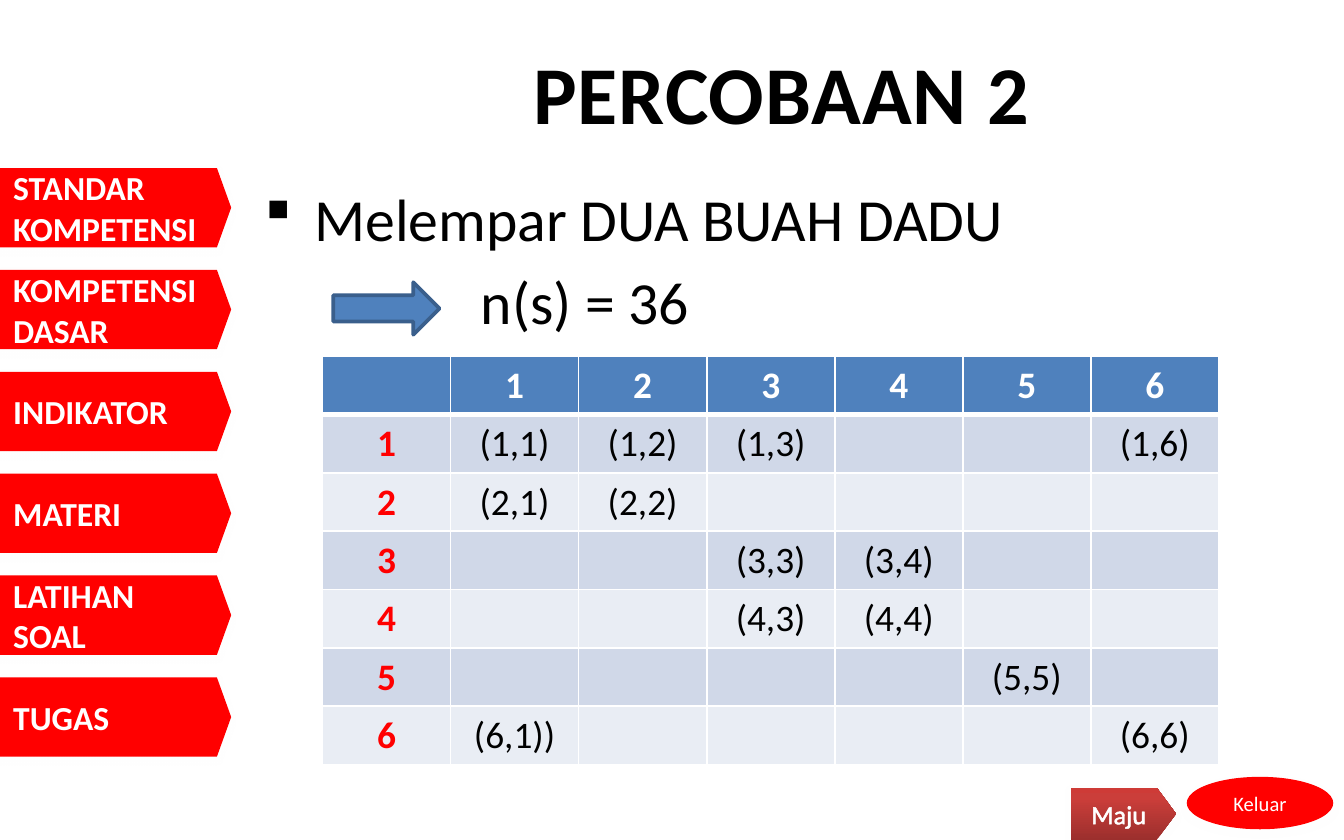
from typing import NamedTuple

from lxml.etree import SubElement
from pptx import Presentation
from pptx.dml.color import RGBColor
from pptx.enum.shapes import MSO_SHAPE
from pptx.enum.text import MSO_ANCHOR, PP_ALIGN
from pptx.oxml.ns import qn
from pptx.util import Inches, Pt

BLACK = RGBColor(0x00, 0x00, 0x00)
WHITE = RGBColor(0xFF, 0xFF, 0xFF)
RED = RGBColor(0xFF, 0x00, 0x00)
BLUE = RGBColor(0x4F, 0x81, 0xBD)
BLUE_EDGE = RGBColor(0x3A, 0x5F, 0x8C)
BANDS = (RGBColor(0xD0, 0xD8, 0xE8), RGBColor(0xE9, 0xED, 0xF4))
GRADIENT = ((0, RGBColor(0x9C, 0x2F, 0x2D)), (80, RGBColor(0xCB, 0x3E, 0x3A)),
            (100, RGBColor(0xCE, 0x3B, 0x37)))
FONT = "Calibri"


class Button(NamedTuple):
    text: str
    left: float
    top: float
    width: float
    height: float
    size: int
    kind: int = MSO_SHAPE.PENTAGON
    adj: float | None = None
    bold: bool = False
    align: int = PP_ALIGN.CENTER


MENU = ("STANDAR KOMPETENSI", "KOMPETENSI DASAR", "INDIKATOR", "MATERI",
        "LATIHAN SOAL", "TUGAS")
MENU_TOP, MENU_STEP = 1.25, 0.758
OUTCOMES = {(1, 1): "(1,1)", (1, 2): "(1,2)", (1, 3): "(1,3)", (1, 6): "(1,6)",
            (2, 1): "(2,1)", (2, 2): "(2,2)", (3, 3): "(3,3)", (3, 4): "(3,4)",
            (4, 3): "(4,3)", (4, 4): "(4,4)", (5, 5): "(5,5)",
            (6, 1): "(6,1))", (6, 6): "(6,6)"}


def set_font(font, size: float, color: RGBColor, bold: bool = False) -> None:
    font.name, font.size, font.bold = FONT, Pt(size), bold
    font.color.rgb = color


def add_solid(parent, color: RGBColor):
    fill = SubElement(parent, qn("a:solidFill"))
    return SubElement(fill, qn("a:srgbClr"), val=str(color))


def add_shadow(s) -> None:
    s.shadow.inherit = False
    effects = s._element.spPr.find(qn("a:effectLst"))
    shadow = SubElement(effects, qn("a:outerShdw"), blurRad=str(Pt(3.1)),
                        dist=str(Pt(1.8)), dir="5400000", rotWithShape="0")
    SubElement(add_solid(shadow, BLACK), qn("a:alpha"), val="35000")


def add_button(slide, b: Button):
    s = slide.shapes.add_shape(b.kind, Inches(b.left), Inches(b.top),
                               Inches(b.width), Inches(b.height))
    if b.adj is not None:
        s.adjustments[0] = b.adj
    s.fill.solid()
    s.fill.fore_color.rgb = RED
    s.line.fill.background()
    add_shadow(s)
    tf = s.text_frame
    tf.word_wrap = True
    tf.vertical_anchor = MSO_ANCHOR.MIDDLE
    tf.text = b.text
    p = tf.paragraphs[0]
    p.alignment = b.align
    set_font(p.runs[0].font, b.size, WHITE, b.bold)
    return s


def set_gradient(s) -> None:
    s.fill.gradient()
    s.fill.gradient_angle = 90
    stops = s._element.spPr.find(".//" + qn("a:gsLst"))
    for stop in list(stops):
        stops.remove(stop)
    for pos, color in GRADIENT:
        stop = SubElement(stops, qn("a:gs"), pos=str(pos * 1000))
        SubElement(stop, qn("a:srgbClr"), val=str(color))


def set_borders(cell, top: float, bottom: float) -> None:
    tcPr = cell._tc.get_or_add_tcPr()
    for side, width in (("L", 1), ("R", 1), ("T", top), ("B", bottom)):
        add_solid(SubElement(tcPr, qn(f"a:ln{side}"), w=str(Pt(width))), WHITE)


def add_outcome_table(slide, count: int = 7) -> None:
    table = slide.shapes.add_table(count, count, Inches(2.4), Inches(2.65),
                                   Inches(6.67), Inches(0.41 * count)).table
    for row in range(count):
        for col in range(count):
            cell = table.cell(row, col)
            set_borders(cell, 3 if row == 1 else 1, 3 if row == 0 else 1)
            cell.fill.solid()
            cell.fill.fore_color.rgb = BANDS[(row - 1) % 2] if row else BLUE
            if row and col:
                text, color = OUTCOMES.get((row, col), ""), BLACK
            else:
                text, color = str(row or col or ""), RED if row else WHITE
            if text:
                cell.text = text
                p = cell.text_frame.paragraphs[0]
                p.alignment = PP_ALIGN.CENTER
                set_font(p.runs[0].font, 20, color, not (row and col))


def add_body(slide) -> None:
    tf = slide.shapes.add_textbox(Inches(1.87), Inches(1.3),
                                  Inches(7.89), Inches(1.3)).text_frame
    tf.word_wrap = True
    tf.text = "Melempar DUA BUAH DADU\nn(s) = 36"
    first, second = tf.paragraphs
    pPr = first._p.get_or_add_pPr()
    pPr.set("marL", str(Inches(0.37)))
    pPr.set("indent", str(Inches(-0.37)))
    SubElement(pPr, qn("a:buFont"), typeface="Wingdings")
    SubElement(pPr, qn("a:buChar"), char="§")
    second._p.get_or_add_pPr().set("marL", str(Inches(1.61)))
    second.space_before = Pt(6.4)
    for p in tf.paragraphs:
        set_font(p.runs[0].font, 32, BLACK)


def main() -> None:
    prs = Presentation()
    prs.slide_width, prs.slide_height = Inches(10), Inches(6.25)
    slide = prs.slides.add_slide(prs.slide_layouts[5])

    # Title
    title = slide.shapes.title
    title.left, title.top = Inches(1.87), Inches(0.25)
    title.width, title.height = Inches(7.89), Inches(0.86)
    title.text_frame.text = "PERCOBAAN 2"
    title.text_frame.vertical_anchor = MSO_ANCHOR.MIDDLE
    p = title.text_frame.paragraphs[0]
    p.alignment = PP_ALIGN.CENTER
    set_font(p.runs[0].font, 44, BLACK, True)
    p.runs[0].font._element.set("spc", "50")

    # Side menu
    for i, text in enumerate(MENU):
        add_button(slide, Button(text, 0, MENU_TOP + i * MENU_STEP, 1.72, 0.59,
                                 18, adj=0.18, bold=True, align=PP_ALIGN.LEFT))

    # Exit and forward buttons
    add_button(slide, Button("Keluar", 8.83, 5.78, 1.09, 0.39, 11, MSO_SHAPE.OVAL))
    forward = add_button(slide, Button("Maju", 7.97, 5.86, 0.78, 0.39, 14, adj=0.37))
    set_gradient(forward)
    r = forward.text_frame.paragraphs[0].runs[0]
    outline = SubElement(r.font._element, qn("a:ln"), w=str(Pt(1.45)))
    add_solid(outline, WHITE)
    r.font._element.insert(0, outline)

    # Experiment, arrow and sample space
    add_body(slide)
    arrow = slide.shapes.add_shape(MSO_SHAPE.RIGHT_ARROW, Inches(2.48), Inches(2.1),
                                   Inches(0.79), Inches(0.39))
    arrow.shadow.inherit = False
    arrow.fill.solid()
    arrow.fill.fore_color.rgb = BLUE
    arrow.line.color.rgb = BLUE_EDGE
    arrow.line.width = Pt(2)
    add_outcome_table(slide)

    prs.save("out.pptx")


if __name__ == "__main__":
    main()
